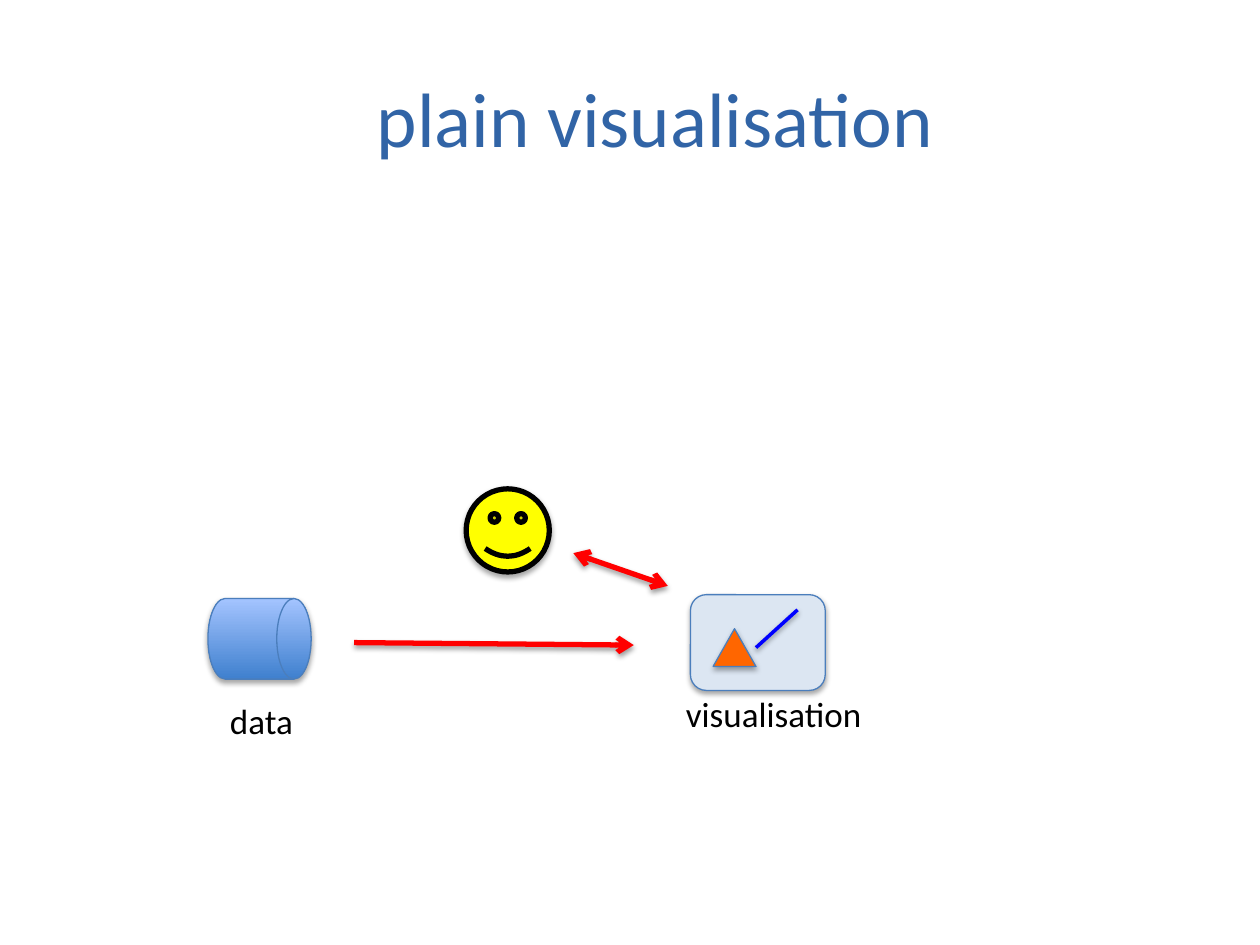
from dataclasses import dataclass

from lxml import etree
from pptx import Presentation, util as u
from pptx.dml.color import RGBColor
from pptx.enum import shapes, text
from pptx.oxml import parse_xml
from pptx.oxml.ns import nsdecls, qn

KIND = shapes.MSO_SHAPE


@dataclass(frozen=True)
class Theme:
    font: str = "Calibri"
    title_size: int = 44
    label_size: int = 20
    title: str = "3164A6"
    label: str = "000000"
    outline: str = "4B7EBC"
    panel: str = "DCE6F2"
    drum_dark: str = "3F80CE"
    drum_light: str = "A4C4FF"
    triangle: str = "FF6600"
    stroke: str = "0000FF"
    arrow: str = "FF0000"
    face: str = "FFFF00"
    thin: float = 0.75
    thick: float = 3


THEME = Theme()


def rgb(name):
    return RGBColor.from_string(name)


def inches(*lengths):
    return [u.Inches(length) for length in lengths]


def add_shadow(shape, distance, opacity):
    """Soft shadow straight below; goes in after the line is set."""
    shape._element.spPr.append(parse_xml(
        f'<a:effectLst {nsdecls("a")}>'
        f'<a:outerShdw blurRad="{u.Pt(3.1)}" dist="{u.Pt(distance)}" '
        f'dir="5400000" rotWithShape="0"><a:srgbClr val="000000">'
        f'<a:alpha val="{opacity * 1000}"/></a:srgbClr></a:outerShdw>'
        f'</a:effectLst>'))


def set_line(shape, color, width):
    shape.line.color.rgb = rgb(color)
    shape.line.width = u.Pt(width)


def format_text(frame, words, size, color):
    frame.text = words
    para = frame.paragraphs[0]
    para.alignment = text.PP_ALIGN.CENTER
    font = para.runs[0].font
    font.name, font.size, font.color.rgb = THEME.font, u.Pt(size), rgb(color)


def add_title(slide, words, box):
    title = slide.shapes.title
    title.left, title.top, title.width, title.height = inches(*box)
    title.text_frame.vertical_anchor = text.MSO_ANCHOR.MIDDLE
    format_text(title.text_frame, words, THEME.title_size, THEME.title)


def add_symbol(slide, kind, box, fills, line=THEME.outline, width=THEME.thin):
    """Preset shape; two fills make a gradient from bottom to top."""
    shape = slide.shapes.add_shape(kind, *inches(*box))
    if len(fills) == 1:
        shape.fill.solid()
        shape.fill.fore_color.rgb = rgb(fills[0])
    else:
        shape.fill.gradient()
        shape.fill.gradient_angle = 90
        for stop, color, place in zip(shape.fill.gradient_stops, fills, (0, 1)):
            stop.color.rgb, stop.position = rgb(color), place
    set_line(shape, line, width)
    add_shadow(shape, 1.8, 35)


def add_label(slide, words, box):
    label = slide.shapes.add_textbox(*inches(*box))
    label.text_frame.word_wrap = False
    label.text_frame.auto_size = text.MSO_AUTO_SIZE.SHAPE_TO_FIT_TEXT
    format_text(label.text_frame, words, THEME.label_size, THEME.label)


def add_line(slide, start, end, color, width, ends=()):
    """Straight line; ends lists the ends that carry an arrowhead."""
    line = slide.shapes.add_connector(
        shapes.MSO_CONNECTOR.STRAIGHT, *inches(*start, *end))
    set_line(line, color, width)
    for end_name in ends:
        etree.SubElement(line.line._get_or_add_ln(),
                         qn(f"a:{end_name}"), type="arrow")
    add_shadow(line, 1.6, 38)


def main():
    deck = Presentation()
    deck.slide_width, deck.slide_height = inches(10, 7.5)
    slide = deck.slides.add_slide(deck.slide_layouts.get_by_name("Title Only"))
    add_title(slide, "plain visualisation", (0.7, 0.3, 9, 1.25))

    # Visualisation panel with its drawing
    add_symbol(slide, KIND.ROUNDED_RECTANGLE, (5.48, 4.72, 1.07, 0.76),
               [THEME.panel])
    add_line(slide, (6.33, 4.84), (6, 5.14), THEME.stroke, 2)
    add_symbol(slide, KIND.ISOSCELES_TRIANGLE, (5.66, 4.99, 0.34, 0.3),
               [THEME.triangle])
    add_label(slide, "visualisation", (5.24, 5.45, 1.8, 0.44))

    # Data store
    add_symbol(slide, KIND.FLOWCHART_DIRECT_ACCESS_STORAGE,
               (1.65, 4.75, 0.82, 0.64), [THEME.drum_dark, THEME.drum_light])
    add_label(slide, "data", (1.71, 5.5, 0.73, 0.44))

    # User
    add_symbol(slide, KIND.SMILEY_FACE, (3.7, 3.88, 0.66, 0.66),
               [THEME.face], THEME.label, THEME.thick)

    # User to panel, data to panel
    add_line(slide, (4.55, 4.39), (5.3, 4.65), THEME.arrow, THEME.thick,
             ("headEnd", "tailEnd"))
    add_line(slide, (2.81, 5.1), (5.03, 5.12), THEME.arrow, THEME.thick,
             ("tailEnd",))

    deck.save("out.pptx")


if __name__ == "__main__":
    main()
